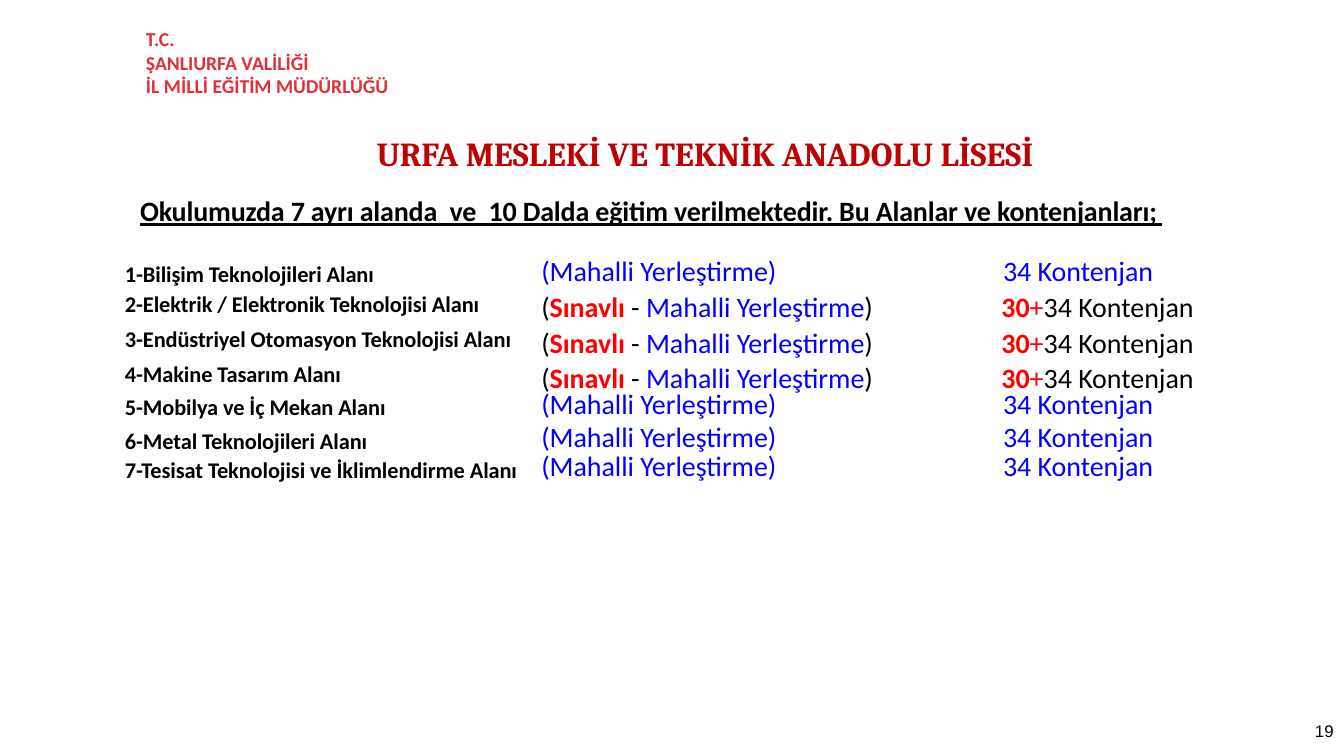
"""Build the slide listing a school's fields of study and their quotas."""
from dataclasses import dataclass

from pptx import Presentation
from pptx.dml.color import RGBColor as Rgb
from pptx.enum.shapes import MSO_SHAPE as Kind
from pptx.enum.text import MSO_ANCHOR as Anchor, PP_ALIGN as Align
from pptx.util import Cm, Pt


@dataclass(frozen=True)
class Theme:
    """Colours, fonts and type sizes of the slide."""
    black: str = "000000"
    white: str = "FFFFFF"
    blue: str = "0000FF"
    red: str = "FF0000"
    rose: str = "E42E37"
    wine: str = "C00000"
    body: str = "Calibri"
    serif: str = "Cambria"
    sans: str = "Arial"
    tiny: int = 12
    small: int = 14
    label: int = 16
    text: int = 20
    title: int = 24


THEME = Theme()
PLAIN = "{2D5ABB26-0587-4C30-8999-92F81FD0307C}"
WIDTHS = (10.44, 10.29, 6.53)
HEIGHTS = (0.71, 0.89, 0.81, 0.84, 0.84, 0.74, 1.12, 0.91)
FIELDS = (
    ("1-Bilişim Teknolojileri Alanı", False),
    ("2-Elektrik / Elektronik Teknolojisi Alanı", True),
    ("3-Endüstriyel Otomasyon Teknolojisi Alanı", True),
    ("4-Makine Tasarım Alanı", True),
    ("5-Mobilya ve İç Mekan Alanı", False),
    ("6-Metal Teknolojileri Alanı", False),
    ("7-Tesisat Teknolojisi ve İklimlendirme Alanı", False),
)
LOCAL = [("(Mahalli Yerleştirme)", THEME.blue, False)]
QUOTA = [("34 Kontenjan", THEME.blue, False)]
EXAM = [
    ("(", THEME.black, False),
    ("Sınavlı ", THEME.red, True),
    ("- ", THEME.black, False),
    ("Mahalli Yerleştirme", THEME.blue, False),
    (")", THEME.black, False),
]
SPLIT = [
    ("30", THEME.red, True),
    ("+", THEME.red, False),
    ("34 Kontenjan", THEME.black, False),
]


def style(run, size, color, bold, face=THEME.body):
    """Set the font of a run."""
    font = run.font
    font.size, font.bold, font.name = Pt(size), bold, face
    font.color.rgb = Rgb.from_string(color)


def track(run, space):
    """Set the letter spacing of a run in hundredths of a point."""
    run._r.get_or_add_rPr().set("spc", str(space))


def inset(part, left=0, top=0, right=0):
    """Set the margins of a cell or text frame in centimetres."""
    part.margin_left, part.margin_top = Cm(left), Cm(top)
    part.margin_right, part.margin_bottom = Cm(right), 0


def write(shape, text, size, color, bold=True, face=THEME.body,
          align=Align.LEFT):
    """Write wrapped text into a shape and return its frame."""
    frame = shape.text_frame
    frame.word_wrap = True
    frame.text = text
    for para in frame.paragraphs:
        para.alignment = align
        for run in para.runs:
            style(run, size, color, bold, face)
    return frame


def add_box(slide, area, *args, **look):
    """Add a text box and return its frame."""
    return write(slide.shapes.add_textbox(*map(Cm, area)), *args, **look)


def add_panel(slide, area, *args, **look):
    """Add a white rectangle with text centred in its height."""
    shape = slide.shapes.add_shape(Kind.RECTANGLE, *map(Cm, area))
    shape.shadow.inherit = False
    shape.fill.solid()
    shape.fill.fore_color.rgb = Rgb.from_string(THEME.white)
    shape.line.fill.background()
    write(shape, *args, **look).vertical_anchor = Anchor.MIDDLE


def fill_cell(cell, parts, size, exam, left, right=0, align=Align.LEFT):
    """Write coloured runs into a table cell."""
    inset(cell, left, 0.03 if exam else 0, right)
    para = cell.text_frame.paragraphs[0]
    para.alignment = align
    if not exam:
        para.line_spacing = Pt(19.1)
    for text, color, bold in parts:
        run = para.add_run()
        run.text = text
        style(run, size, color, bold)
        track(run, -5)


def add_grid(slide):
    """Add the table of fields, placement types and quotas."""
    area = (3.05, 6.6, sum(WIDTHS), sum(HEIGHTS))
    grid = slide.shapes.add_table(len(HEIGHTS), len(WIDTHS),
                                  *map(Cm, area)).table
    grid.first_row = grid.horz_banding = False
    grid._tbl.tblPr[0].text = PLAIN
    for col, width in zip(grid.columns, WIDTHS):
        col.width = Cm(width)
    for row, height in zip(grid.rows, HEIGHTS):
        row.height = Cm(height)
    for cell in grid.iter_cells():
        cell.fill.background()
    for row, (name, exam) in zip(grid.rows, FIELDS):
        field, place, quota = row.cells
        fill_cell(field, [(name, THEME.black, True)], THEME.label, exam, 0.1)
        fill_cell(place, EXAM if exam else LOCAL, THEME.text, exam, 0.15)
        if exam:
            fill_cell(quota, SPLIT, THEME.text, exam, 0, 0.23, Align.RIGHT)
        else:
            fill_cell(quota, QUOTA, THEME.text, exam, 1.5)


def main():
    """Build and save the slide."""
    deck = Presentation()
    deck.slide_width, deck.slide_height = Cm(33.87), Cm(19.05)
    slide = deck.slides.add_slide(deck.slide_layouts[6])
    add_box(slide, (29.39, 18.03, 4.47, 0.76), "19", THEME.tiny, THEME.black,
            bold=False, face=THEME.sans, align=Align.RIGHT)
    add_panel(slide, (3.43, 0.79, 6.81, 1.57),
              "T.C.\nŞANLIURFA VALİLİĞİ\nİL MİLLİ EĞİTİM MÜDÜRLÜĞÜ",
              THEME.small, THEME.rose)
    title = add_box(slide, (5.23, 3.38, 25.07, 0.99),
                    "URFA MESLEKİ VE TEKNİK ANADOLU LİSESİ",
                    THEME.title, THEME.wine, face=THEME.serif,
                    align=Align.CENTER)
    inset(title, top=0.03)
    title.paragraphs[0].line_spacing = Pt(27.4)
    intro = add_box(slide, (3.5, 4.85, 26.8, 0.89),
                    "Okulumuzda 7 ayrı alanda  ve  10 Dalda eğitim "
                    "verilmektedir. Bu Alanlar ve kontenjanları; ",
                    THEME.text, THEME.black)
    inset(intro, 0.03, 0.03)
    run = intro.paragraphs[0].runs[0]
    run.font.underline = True
    track(run, -13)
    add_grid(slide)
    deck.save("out.pptx")


if __name__ == "__main__":
    main()
